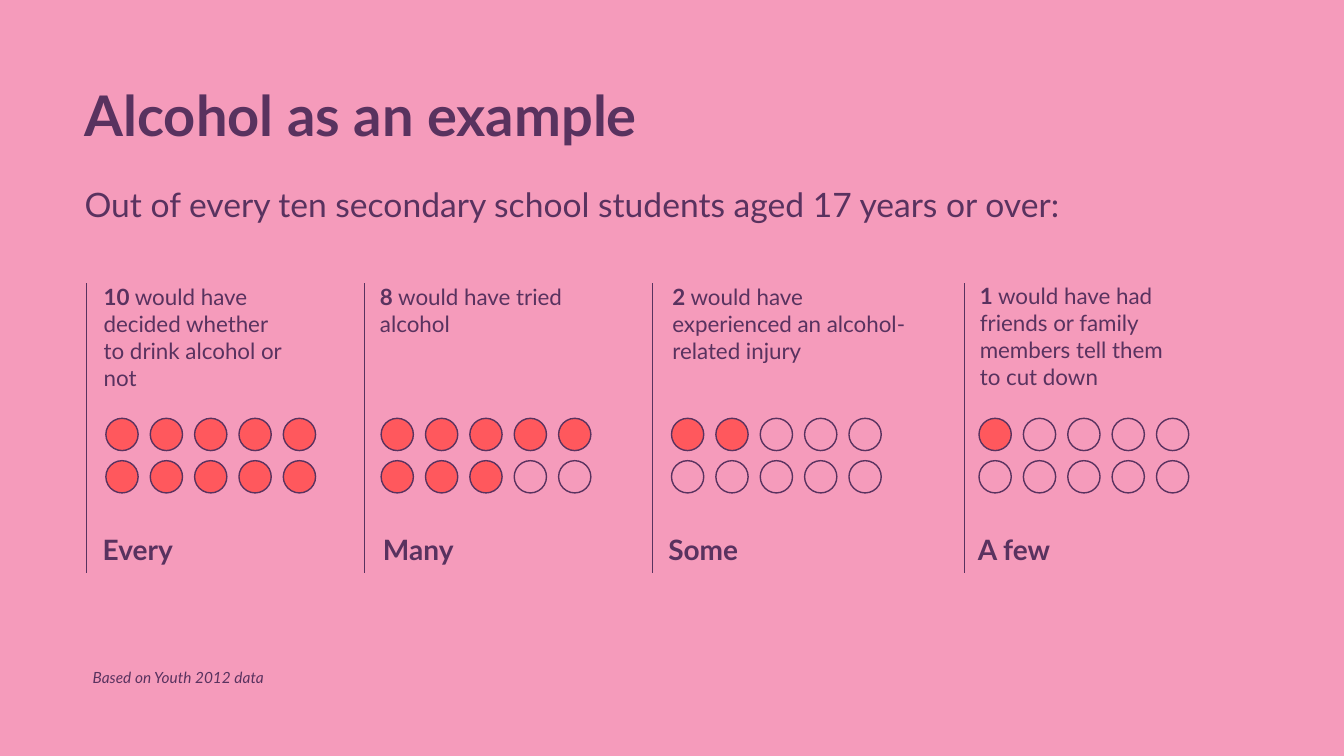
from dataclasses import dataclass
from pptx import Presentation
from pptx import util as u
from pptx.dml.color import RGBColor
from pptx.enum import shapes, text
from pptx.oxml.ns import qn
from lxml import etree


@dataclass(frozen=True)
class Theme:
    font: str = "Lato"
    ink: RGBColor = RGBColor.from_string("59325F")
    pink: RGBColor = RGBColor.from_string("F59BBB")
    coral: RGBColor = RGBColor.from_string("FF585D")
    title: int = 40
    lead: int = 24
    label: int = 20
    body: int = 16
    note: int = 11


theme = Theme()


def write(sp, words, size, bold=False, italic=False, lead="", spacing=1.0):
    tf = sp.text_frame
    tf.word_wrap = True
    tf.auto_size = text.MSO_AUTO_SIZE.NONE
    tf.vertical_anchor = text.MSO_ANCHOR.TOP
    p = tf.paragraphs[0]
    p.alignment = text.PP_ALIGN.LEFT
    p.line_spacing = spacing
    p.space_before = u.Pt(0)
    for part, heavy in ((lead, True), (words, bold)):
        if part:
            r = p.add_run()
            r.text = part
            r.font.name = theme.font
            r.font.size = u.Pt(size)
            r.font.bold = heavy
            r.font.italic = italic
            r.font.color.rgb = theme.ink


def box(*inches):
    return [u.Inches(n) for n in inches]


prs = Presentation()
prs.slide_width, prs.slide_height = box(13.33, 7.5)
s = prs.slides.add_slide(prs.slide_layouts[5])
s.background.fill.solid()
s.background.fill.fore_color.rgb = theme.pink

title = s.shapes.title
title.left, title.top, title.width, title.height = box(0.74, 0.82, 9.91, 0.8)
write(title, "Alcohol as an example", theme.title, bold=True, spacing=0.9)
write(s.shapes.add_textbox(*box(0.74, 1.78, 10.62, 0.5)),
      "Out of every ten secondary school students aged 17 years or over:", theme.lead)
write(s.shapes.add_textbox(*box(0.82, 6.58, 2.85, 0.41)),
      "Based on Youth 2012 data", theme.note, italic=True)

columns = [
    (10, " would have decided whether to drink alcohol or not", "Every",
     0.86, (0.93, 2.76, 2.02, 1.56), 0.92, 1.05),
    (8, " would have tried alcohol", "Many",
     3.61, (3.67, 2.76, 2.51, 1.15), 3.7, 3.78),
    (2, " would have experienced an alcohol-related injury", "Some",
     6.47, (6.57, 2.76, 2.51, 1.15), 6.53, 6.66),
    (1, " would have had friends or family members tell them to cut down", "A few",
     9.56, (9.62, 2.75, 2.26, 1.21), 9.6, 9.71),
]

for count, claim, label, rule_x, claim_box, label_x, dots_x in columns:
    group = s.shapes.add_group_shape().shapes
    rule = group.add_connector(shapes.MSO_CONNECTOR.STRAIGHT,
                               *box(rule_x, 2.81, rule_x, 5.68))
    rule.line.color.rgb = theme.ink
    rule.line.width = u.Pt(0.5)
    etree.SubElement(rule._element.spPr, qn("a:effectLst"))
    write(group.add_textbox(*box(*claim_box)), claim, theme.body, lead=str(count))
    write(group.add_textbox(*box(label_x, 5.23, 1.28, 0.44)), label, theme.label, bold=True)
    for i in range(10):
        row, col = divmod(i, 5)
        dot = group.add_shape(shapes.MSO_SHAPE.OVAL,
                              *box(dots_x + col * 0.44, 4.15 + row * 0.42, 0.32, 0.32))
        dot.shadow.inherit = False
        dot.fill.solid()
        dot.fill.fore_color.rgb = theme.coral if i < count else theme.pink
        dot.line.color.rgb = theme.ink
        dot.line.width = u.Pt(1)

prs.save("out.pptx")
